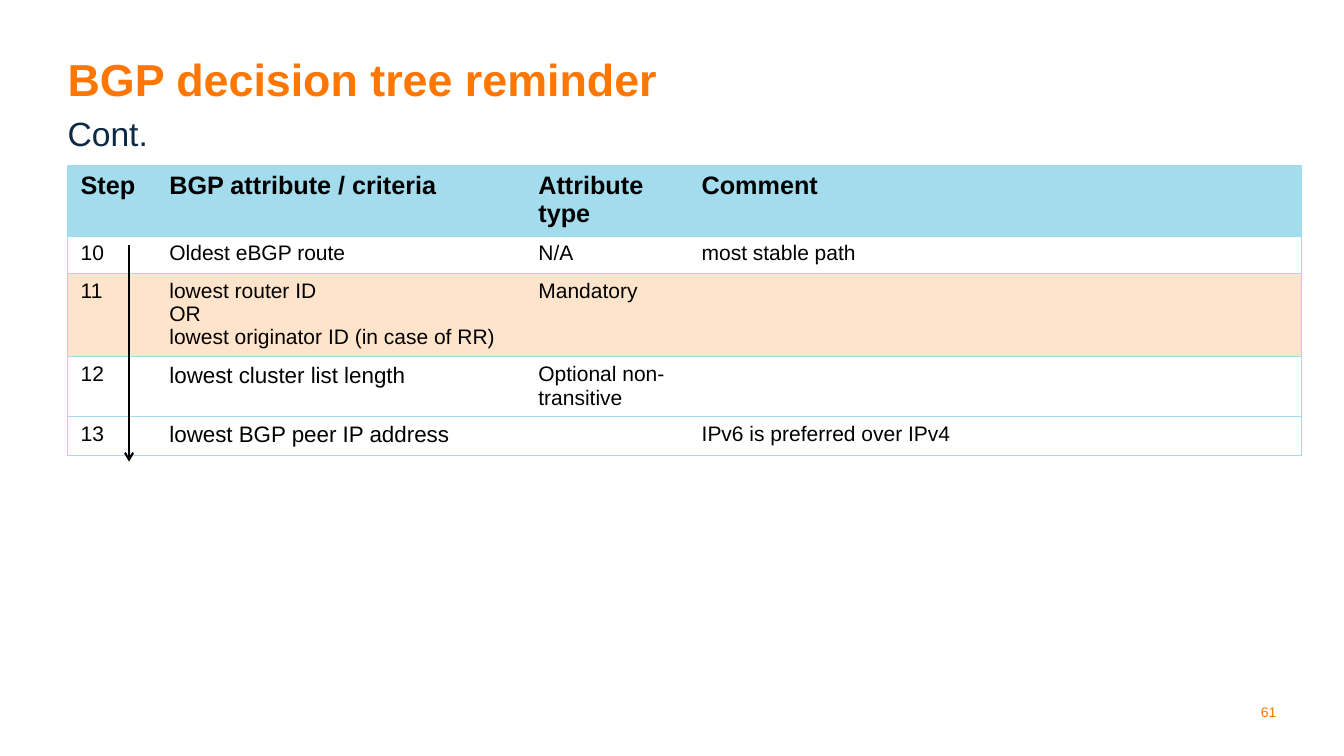
from lxml import etree
from pptx import Presentation
from pptx.dml.color import RGBColor
from pptx.enum.shapes import MSO_CONNECTOR
from pptx.enum.text import MSO_ANCHOR, MSO_AUTO_SIZE, PP_ALIGN
from pptx.oxml.ns import qn
from pptx.util import Pt

PX = 9144  # 100 px to the inch
LEFT, RIGHT = PP_ALIGN.LEFT, PP_ALIGN.RIGHT
TOP, BOTTOM = MSO_ANCHOR.TOP, MSO_ANCHOR.BOTTOM
NO_AUTOFIT = MSO_AUTO_SIZE.NONE
STRAIGHT = MSO_CONNECTOR.STRAIGHT

ORANGE, NAVY, BLACK = "FF7600", "0D2A45", "000000"
SKY, PEACH = "A2DCED", "FFE4CC"

COLUMN_WIDTHS = [88, 366, 162, 608]
ROW_HEIGHTS = [70, 37, 83, 59, 39]
HEADER = ["Step", "BGP attribute / criteria", "Attribute type", "Comment"]
STEPS = [
    ["10", "Oldest eBGP route", "N/A", "most stable path"],
    ["11", "lowest router ID\nOR\nlowest originator ID (in case of RR)", "Mandatory", ""],
    ["12", "lowest cluster list length", "Optional non-transitive", ""],
    ["13", "lowest BGP peer IP address", "", "IPv6 is preferred over IPv4"],
]
HIGHLIGHTED_STEP = "11"
LARGER_CRITERIA = {"12", "13"}


def px(length):
    return length * PX


def color(hex_string):
    return RGBColor.from_string(hex_string)


def write(frame, text, size, hex_color=BLACK, bold=False, align=LEFT, spacing=1.0):
    """Fill a text frame, one paragraph for each line of text."""
    for index, line in enumerate(text.split("\n")):
        paragraph = frame.add_paragraph() if index else frame.paragraphs[0]
        paragraph.alignment = align
        paragraph.line_spacing = spacing
        paragraph.space_before = Pt(0)
        if not line:
            paragraph._p.get_or_add_endParaRPr().set("sz", str(size * 100))
            continue
        run = paragraph.add_run()
        run.text = line
        run.font.name = "Arial"
        run.font.size = Pt(size)
        run.font.bold = bold
        run.font.color.rgb = color(hex_color)


def place_text(shape, box, text, size, anchor=TOP, wrap=True, **text_format):
    """Place a text shape without insets in its box and write its text."""
    shape.left, shape.top, shape.width, shape.height = map(px, box)
    frame = shape.text_frame
    frame.auto_size = NO_AUTOFIT
    frame.word_wrap = wrap
    frame.vertical_anchor = anchor
    frame.margin_left = frame.margin_right = frame.margin_top = frame.margin_bottom = 0
    write(frame, text, size, spacing=0.9, **text_format)


def add_headings(slide, left, top, width):
    title, subtitle = slide.shapes.title, slide.placeholders[1]
    place_text(title, (left, top, width, 45), "BGP decision tree reminder", 32,
               hex_color=ORANGE, bold=True)
    place_text(subtitle, (left, top + 60, width, 42), "Cont.", 24, hex_color=NAVY)
    properties = subtitle.text_frame.paragraphs[0]._p.get_or_add_pPr()
    properties.set("marL", "0")
    properties.set("indent", "0")
    etree.SubElement(properties, qn("a:buNone"))


def set_borders(cell, visible_sides):
    properties = cell._tc.get_or_add_tcPr()
    for side in "LRTB":
        line = etree.SubElement(properties, qn(f"a:ln{side}"), w=str(Pt(0.5)))
        if side in visible_sides:
            fill = etree.SubElement(line, qn("a:solidFill"))
            etree.SubElement(fill, qn("a:srgbClr"), val=SKY)
        else:
            etree.SubElement(line, qn("a:noFill"))


def format_cell(cell, text, size, bold, fill, sides):
    cell.margin_left = cell.margin_right = px(13)
    cell.margin_top = cell.margin_bottom = px(6)
    cell.vertical_anchor = TOP
    write(cell.text_frame, text, size, bold=bold)
    set_borders(cell, sides)
    if fill:
        cell.fill.solid()
        cell.fill.fore_color.rgb = color(fill)
    else:
        cell.fill.background()


def add_decision_table(slide, left, top):
    rows = [HEADER] + STEPS
    frame = slide.shapes.add_table(len(rows), len(HEADER), px(left), px(top),
                                   px(sum(COLUMN_WIDTHS)), px(sum(ROW_HEIGHTS)))
    table = frame.table
    table.first_row = table.horz_banding = False
    for column, width in zip(table.columns, COLUMN_WIDTHS):
        column.width = px(width)
    for row, height in zip(table.rows, ROW_HEIGHTS):
        row.height = px(height)
    last_column = len(HEADER) - 1
    for row_index, texts in enumerate(rows):
        is_header = row_index == 0
        fill = SKY if is_header else PEACH if texts[0] == HIGHLIGHTED_STEP else None
        for column_index, text in enumerate(texts):
            larger = column_index == 1 and texts[0] in LARGER_CRITERIA
            size = 18 if is_header else 16 if larger else 15
            sides = "TB" + {0: "L", last_column: "R"}.get(column_index, "")
            format_cell(table.cell(row_index, column_index), text, size,
                        is_header, fill, sides)


def add_order_arrow(slide, x, top, bottom):
    """Draw the arrow that shows the order of the steps."""
    arrow = slide.shapes.add_connector(STRAIGHT, px(x), px(top), px(x), px(bottom))
    arrow.line.color.rgb = color(BLACK)
    arrow.line.width = Pt(1.5)
    etree.SubElement(arrow.line._get_or_add_ln(), qn("a:tailEnd"), type="arrow")
    etree.SubElement(arrow._element.spPr, qn("a:effectLst"))


def add_page_number(slide, box):
    number = slide.shapes.add_textbox(*map(px, box))
    place_text(number, box, "61", 10, anchor=BOTTOM, wrap=False,
               hex_color=ORANGE, align=RIGHT)


def main():
    presentation = Presentation()
    presentation.slide_width, presentation.slide_height = px(1333), px(750)
    slide = presentation.slides.add_slide(presentation.slide_layouts[1])
    add_headings(slide, 67, 57, 1200)
    add_decision_table(slide, 67, 164)
    add_order_arrow(slide, 128, 243, 458)
    add_page_number(slide, (1249, 700, 17, 15))
    presentation.save("out.pptx")


if __name__ == "__main__":
    main()
